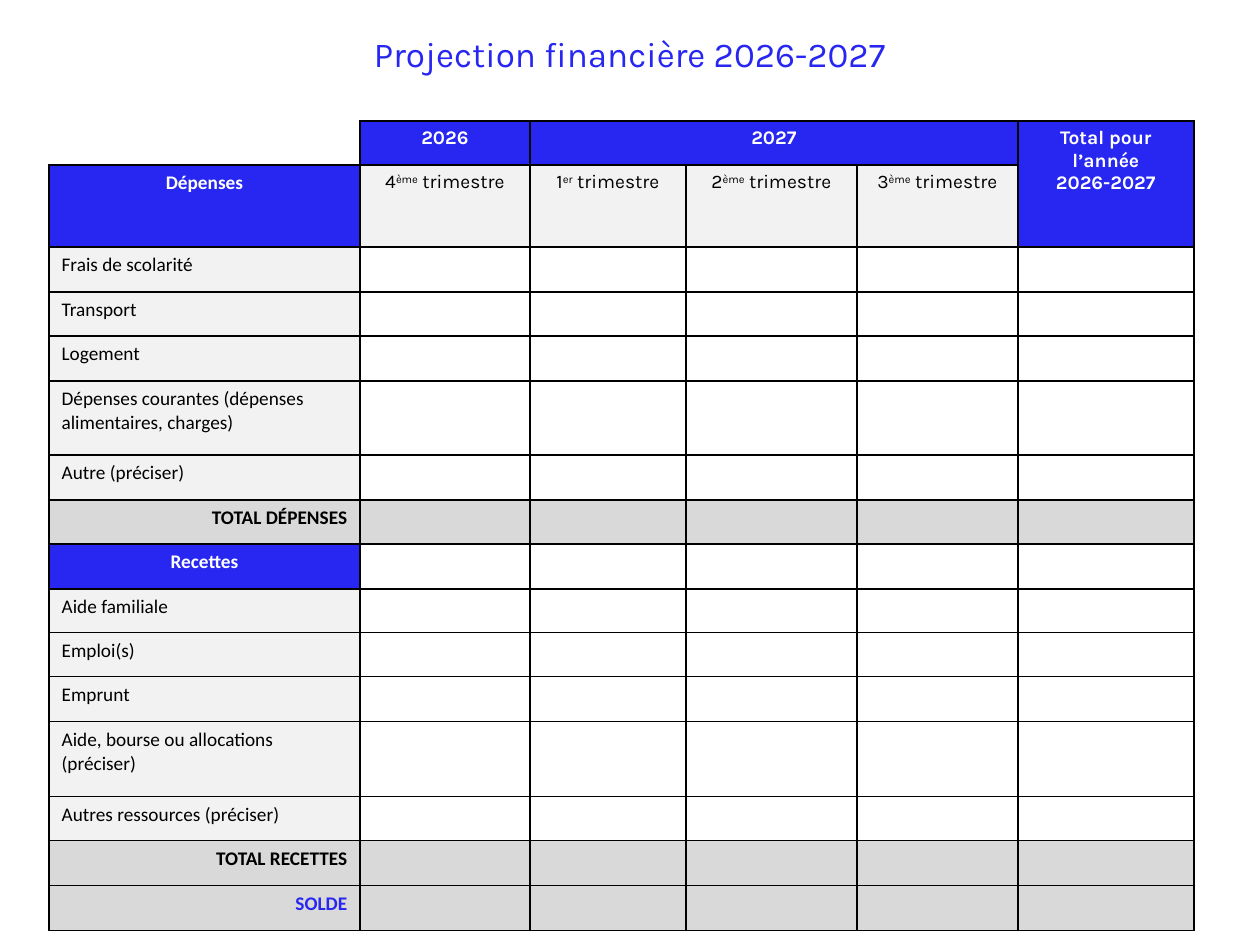
from lxml import etree
from pptx import Presentation
from pptx import util as u
from pptx.dml.color import RGBColor
from pptx.enum import text
from pptx.oxml.ns import qn

BLUE = RGBColor(0x27, 0x27, 0xF1)
WHITE = RGBColor(0xFF, 0xFF, 0xFF)
BLACK = RGBColor(0, 0, 0)
LIGHT = RGBColor(0xF2, 0xF2, 0xF2)
GREY = RGBColor(0xD9, 0xD9, 0xD9)
PX = u.Inches(1) / 126

COLUMNS = [311, 170, 156, 171, 161, 176]
ROWS = [44, 59, 45, 44, 45, 74, 45, 44, 45, 44, 44, 45, 75, 44, 45, 45]

ALIGN = text.PP_ALIGN
HEADER = dict(fill=BLUE, align=ALIGN.CENTER, name="Karla", color=WHITE, bold=True)
SECTION = dict(HEADER, name="Calibri")
QUARTER = dict(fill=LIGHT, align=ALIGN.CENTER, name="Karla", color=BLACK, bold=False)
ITEM = dict(fill=LIGHT, align=ALIGN.LEFT, name="Calibri", color=BLACK, bold=False)
TOTAL = dict(fill=GREY, align=ALIGN.RIGHT, name="Calibri", color=BLACK, bold=True)
BALANCE = dict(TOTAL, color=BLUE)
BLANK = dict(ITEM, fill=WHITE)
CORNER = dict(ITEM, fill=None)

HEADINGS = [
    (0, 1, "2026", HEADER),
    (0, 2, "2027", HEADER),
    (0, 5, "Total pour l’année\n2026-2027", HEADER),
    (1, 1, "4^ème^ trimestre", QUARTER),
    (1, 2, "1^er^ trimestre", QUARTER),
    (1, 3, "2^ème^ trimestre", QUARTER),
    (1, 4, "3^ème^ trimestre", QUARTER),
]
LABELS = [
    ("Dépenses", SECTION),
    ("Frais de scolarité", ITEM),
    ("Transport", ITEM),
    ("Logement", ITEM),
    ("Dépenses courantes (dépenses alimentaires, charges)", ITEM),
    ("Autre (préciser)", ITEM),
    ("TOTAL DÉPENSES", TOTAL),
    ("Recettes", SECTION),
    ("Aide familiale", ITEM),
    ("Emploi(s)", ITEM),
    ("Emprunt", ITEM),
    ("Aide, bourse ou allocations (préciser)", ITEM),
    ("Autres ressources (préciser)", ITEM),
    ("TOTAL RECETTES", TOTAL),
    ("SOLDE", BALANCE),
]


def px(value):
    return u.Emu(round(value * PX))


class Page:
    cell_size = u.Pt(11)
    title_size = u.Pt(20)

    def __init__(self, presentation):
        self.slide = presentation.slides.add_slide(presentation.slide_layouts[5])

    def title(self, words, left, top, width, height):
        shape = self.slide.shapes.title
        box = dict(left=left, top=top, width=width, height=height)
        for key, value in box.items():
            setattr(shape, key, px(value))
        frame = shape.text_frame
        frame.text = words
        frame.word_wrap = True
        frame.vertical_anchor = text.MSO_ANCHOR.TOP
        frame.auto_size = text.MSO_AUTO_SIZE.SHAPE_TO_FIT_TEXT
        paragraph = frame.paragraphs[0]
        paragraph.alignment = ALIGN.CENTER
        self.font(paragraph.runs[0], self.title_size, dict(name="Karla", color=BLUE, bold=False))

    def font(self, run, size, style):
        values = dict(size=size, name=style["name"], bold=style["bold"])
        for key, value in values.items():
            setattr(run.font, key, value)
        run.font.color.rgb = style["color"]

    def table(self, left, top, columns, rows):
        frame = self.slide.shapes.add_table(
            len(rows), len(columns), px(left), px(top), px(sum(columns)), px(sum(rows)))
        table = frame.table
        table.first_row = table.horz_banding = False
        for column, width in zip(table.columns, columns):
            column.width = px(width)
        for row, height in zip(table.rows, rows):
            row.height = px(height)
        return table

    def cell(self, cell, words, style, sides="LRTB"):
        if style["fill"] is None:
            cell.fill.background()
        else:
            cell.fill.solid()
            cell.fill.fore_color.rgb = style["fill"]
        self.borders(cell, sides)
        cell.text_frame.text = ""
        for index, line in enumerate(words.split("\n")):
            frame = cell.text_frame
            paragraph = frame.add_paragraph() if index else frame.paragraphs[0]
            paragraph.alignment = style["align"]
            if not line:
                paragraph._p.get_or_add_endParaRPr().set("sz", str(int(self.cell_size.pt * 100)))
                continue
            for position, part in enumerate(line.split("^")):
                run = paragraph.add_run()
                run.text = part
                self.font(run, self.cell_size, style)
                if position % 2:
                    run._r.get_or_add_rPr().set("baseline", "30000")

    def borders(self, cell, sides):
        properties = cell._tc.get_or_add_tcPr()
        for index, side in enumerate("LRTB"):
            line = etree.Element(qn(f"a:ln{side}"), w=str(u.Pt(1)))
            if side in sides:
                fill = etree.SubElement(line, qn("a:solidFill"))
                etree.SubElement(fill, qn("a:srgbClr"), val=str(BLACK))
            else:
                etree.SubElement(line, qn("a:noFill"))
            properties.insert(index, line)


def main():
    presentation = Presentation()
    presentation.slide_width = px(1260)
    presentation.slide_height = px(945)
    page = Page(presentation)
    page.title("Projection financière 2026-2027", 0, 26, 1260, 55)

    table = page.table(49, 121, COLUMNS, ROWS)
    table.cell(0, 2).merge(table.cell(0, 4))
    table.cell(0, 5).merge(table.cell(1, 5))
    content = {(row, column): (words, style) for row, column, words, style in HEADINGS}
    for row, (words, style) in enumerate(LABELS, start=1):
        content[row, 0] = words, style
        filler = dict(BLANK, fill=GREY) if style["fill"] == GREY else BLANK
        for column in range(1, len(COLUMNS)):
            content.setdefault((row, column), ("", filler))
    for column in (3, 4):
        content[0, column] = "", HEADER
    content[1, 5] = "", HEADER
    for (row, column), (words, style) in content.items():
        page.cell(table.cell(row, column), words, style)
    page.cell(table.cell(0, 0), "", CORNER, sides="RB")

    presentation.save("out.pptx")


if __name__ == "__main__":
    main()
